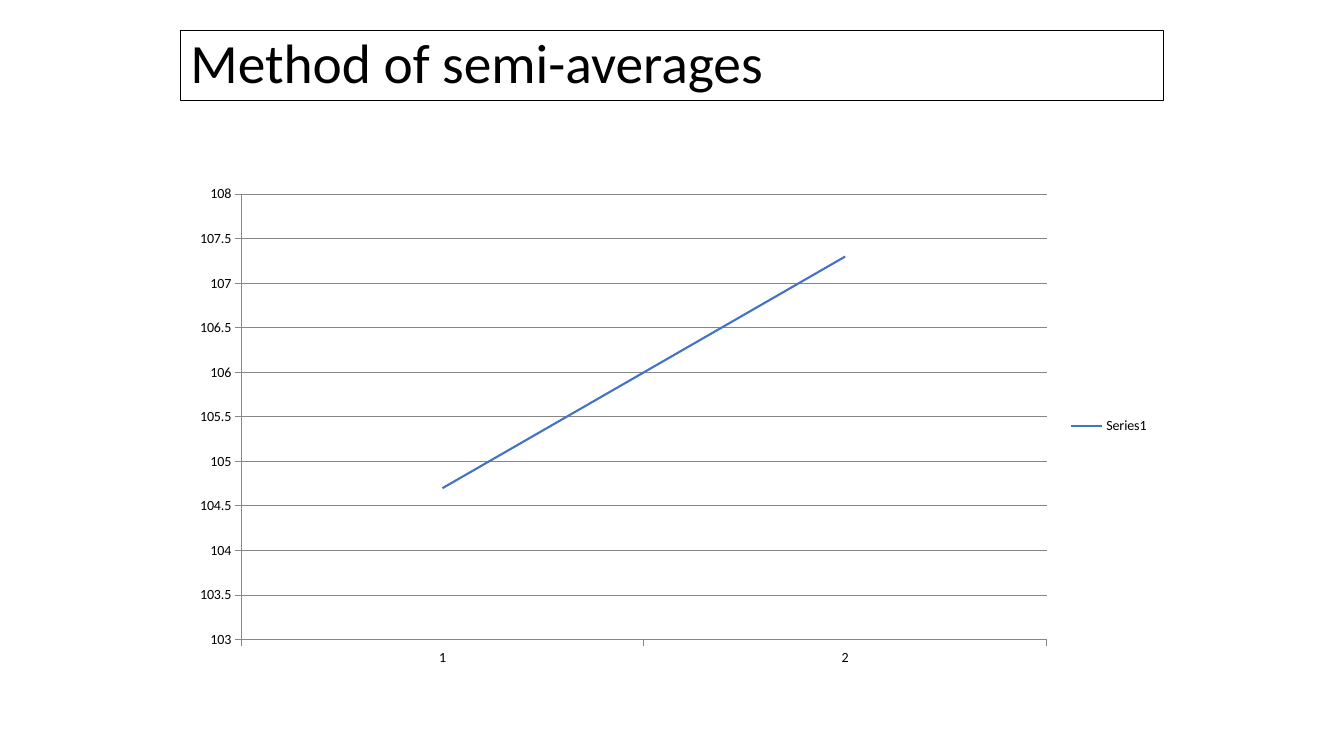
from pptx import Presentation
from pptx.chart.data import CategoryChartData
from pptx.dml.color import RGBColor
from pptx.enum.chart import XL_CHART_TYPE, XL_LEGEND_POSITION, XL_TICK_MARK
from pptx.enum.shapes import MSO_SHAPE
from pptx.enum.text import MSO_ANCHOR, PP_ALIGN
from pptx.util import Inches, Pt

STACKED_LINE = XL_CHART_TYPE.LINE_STACKED
LEGEND_RIGHT = XL_LEGEND_POSITION.RIGHT
TICK_OUT, TICK_NONE = XL_TICK_MARK.OUTSIDE, XL_TICK_MARK.NONE
RECTANGLE = MSO_SHAPE.RECTANGLE
MIDDLE = MSO_ANCHOR.MIDDLE
LEFT = PP_ALIGN.LEFT

TITLE = "Method of semi-averages"
SERIES = "Series1"
SEMI_AVERAGES = {"1": 104.7, "2": 107.3}
SCALE = {"minimum_scale": 103, "maximum_scale": 108, "major_unit": 0.5}

FONT = "Calibri"
BLACK, BLUE, GREY = "000000", "4472C4", "868686"
WIDTH, HEIGHT = 13.33, 7.5
MARGIN = 1.79
TITLE_AREA = (MARGIN, 0.04 * HEIGHT, WIDTH - 2 * MARGIN, 0.7)
CHART_AREA = (MARGIN, 1.75, 9.71, 0.66 * HEIGHT)


def color(value):
    return RGBColor.from_string(value)


def style_font(font, size, ink=BLACK):
    font.name = FONT
    font.size = Pt(size)
    font.bold = False
    font.color.rgb = color(ink)


def style_line(line, ink, width):
    line.color.rgb = color(ink)
    line.width = Pt(width)


def write(shape, text, size, ink=BLACK, align=LEFT, anchor=MIDDLE, spacing=0.9):
    frame = shape.text_frame
    frame.word_wrap = True
    frame.vertical_anchor = anchor
    paragraph = frame.paragraphs[0]
    paragraph.alignment = align
    paragraph.line_spacing = spacing
    run = paragraph.add_run()
    run.text = text
    style_font(run.font, size, ink)


def add_title(slide):
    title = slide.shapes.add_shape(RECTANGLE, *map(Inches, TITLE_AREA))
    title.shadow.inherit = False
    title.fill.background()
    style_line(title.line, BLACK, 0.75)
    write(title, TITLE, size=39.6)


def add_trend(slide):
    trend_data = CategoryChartData(number_format="General")
    trend_data.categories = list(SEMI_AVERAGES)
    trend_data.add_series(SERIES, list(SEMI_AVERAGES.values()))
    chart = slide.shapes.add_chart(
        STACKED_LINE, *map(Inches, CHART_AREA), trend_data
    ).chart
    chart.has_title = False
    style_font(chart.font, 10)

    chart.has_legend = True
    chart.legend.position = LEGEND_RIGHT
    chart.legend.include_in_layout = False

    for axis in (chart.category_axis, chart.value_axis):
        axis.major_tick_mark = TICK_OUT
        axis.minor_tick_mark = TICK_NONE
        style_line(axis.format.line, GREY, 0.75)
    chart.category_axis.has_major_gridlines = False
    values = chart.value_axis
    values.has_major_gridlines = True
    style_line(values.major_gridlines.format.line, GREY, 0.75)
    for setting, amount in SCALE.items():
        setattr(values, setting, amount)

    plot = chart.plots[0]
    plot.vary_by_categories = False
    trend = plot.series[0]
    trend.smooth = False
    style_line(trend.format.line, BLUE, 1.5)


def main():
    deck = Presentation()
    deck.slide_width, deck.slide_height = Inches(WIDTH), Inches(HEIGHT)
    slide = deck.slides.add_slide(deck.slide_layouts[6])
    add_title(slide)
    add_trend(slide)
    deck.save("out.pptx")


if __name__ == "__main__":
    main()
